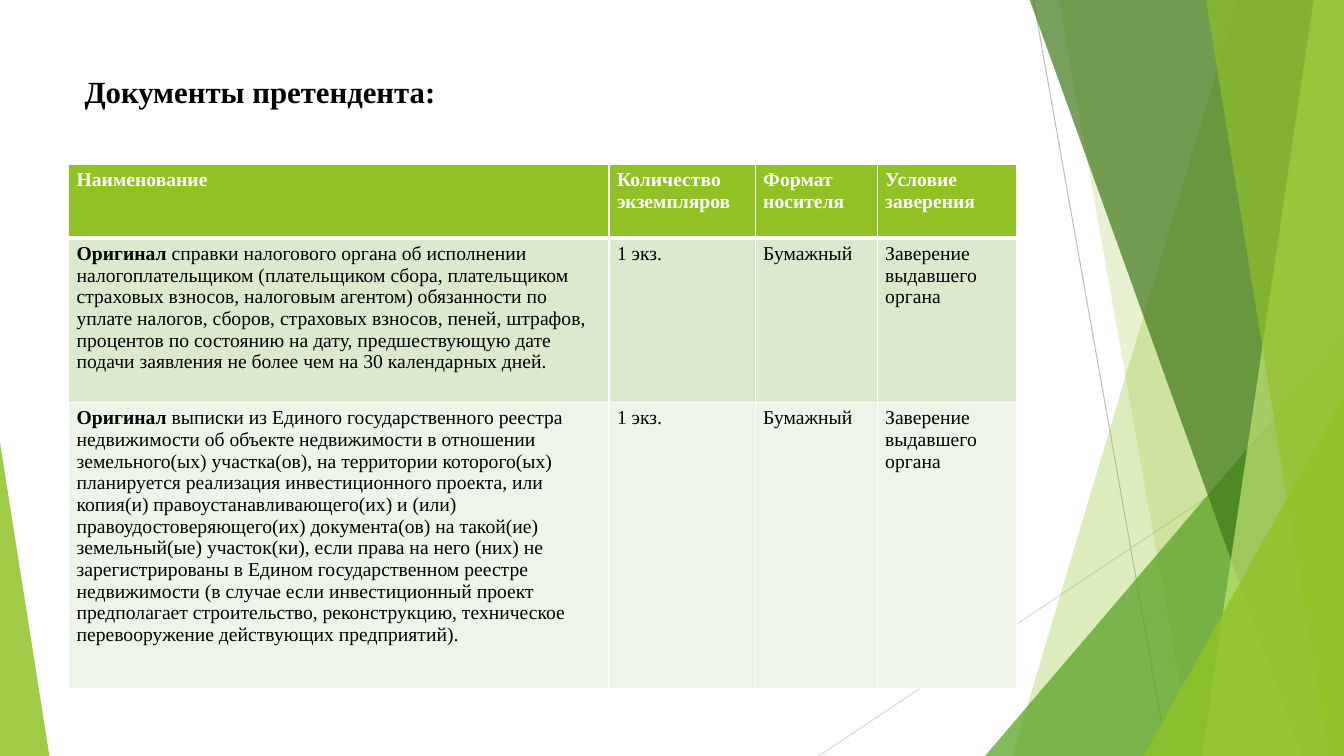
from dataclasses import dataclass

from lxml import etree
from pptx import Presentation, util as u
from pptx.dml.color import RGBColor
from pptx.enum import shapes, text
from pptx.oxml import ns

PX = 9144
WIDE, TALL = 1333, 750


@dataclass(frozen=True)
class Theme:
    """Colours, font and type sizes of the slide."""
    font: str = "Times New Roman"
    head: int = 22
    body: int = 14
    ink: str = "000000"
    white: str = "FFFFFF"
    lime: str = "90C226"
    pale: str = "C0E474"
    leaf: str = "54A021"
    moss: str = "3F7819"
    band: tuple = ("DBE9CD", "EEF4E8")
    rule: tuple = ("BFBFBF", "D9D9D9")


T = Theme()

HEADS = ["Наименование", "Количество экземпляров", "Формат носителя", "Условие заверения"]
TERMS = ["1 экз.", "Бумажный", "Заверение выдавшего органа"]
FIRST = "Оригинал"
DOCS = [
    " справки налогового органа об исполнении налогоплательщиком (плательщиком сбора, "
    "плательщиком страховых взносов, налоговым агентом) обязанности по уплате налогов, "
    "сборов, страховых взносов, пеней, штрафов, процентов по состоянию на дату, "
    "предшествующую дате подачи заявления не более чем на 30 календарных дней.",
    " выписки из Единого государственного реестра недвижимости об объекте недвижимости "
    "в отношении земельного(ых) участка(ов), на территории которого(ых) планируется "
    "реализация инвестиционного проекта, или копия(и) правоустанавливающего(их) и (или) "
    "правоудостоверяющего(их) документа(ов) на такой(ие) земельный(ые) участок(ки), если "
    "права на него (них) не зарегистрированы в Едином государственном реестре "
    "недвижимости (в случае если инвестиционный проект предполагает строительство, "
    "реконструкцию, техническое перевооружение действующих предприятий).",
]


def emu(*vals):
    """Turn px lengths into EMU."""
    return [u.Emu(v * PX) for v in vals]


def tint(fill, hue, alpha=100):
    """Set a solid fill with an opacity in percent."""
    fill.solid()
    fill.fore_color.rgb = RGBColor.from_string(hue)
    if alpha < 100:
        clr = fill._xPr.find(".//" + ns.qn("a:srgbClr"))
        etree.SubElement(clr, ns.qn("a:alpha"), val=str(alpha * 1000))


def paint(shape, hue, alpha):
    """Give a shape a flat see-through fill."""
    shape.shadow.inherit = False
    shape.line.fill.background()
    tint(shape.fill, hue, alpha)


def wedge(slide, box, adj, hue, alpha):
    """Draw a triangle whose tip sits at adj of its width."""
    tri = slide.shapes.add_shape(shapes.MSO_SHAPE.ISOSCELES_TRIANGLE, *emu(*box))
    tri.adjustments[0] = adj
    paint(tri, hue, alpha)


def shard(slide, box, top, low, hue, alpha):
    """Draw a band from a slanted left edge to the right of the box."""
    x, y, w, h = box
    pen = slide.shapes.build_freeform(*emu(x + top, y), scale=1.0)
    ends = [(x + w, y), (x + w, y + h), (x + low, y + h)]
    pen.add_line_segments([emu(*end) for end in ends], close=True)
    paint(pen.convert_to_shape(), hue, alpha)


def stroke(slide, ends, hue):
    """Draw a thin straight line."""
    line = slide.shapes.add_connector(shapes.MSO_CONNECTOR.STRAIGHT, *emu(*ends))
    line.line.width = u.Pt(0.75)
    tint(line.line.fill, hue)
    etree.SubElement(line._element.spPr, ns.qn("a:effectLst"))


def decor(slide, box):
    """Place the lines and green facets on the right of the slide."""
    x, y, w, h = box
    base = y + h
    stroke(slide, (x + 48, 0, x + 181, base), T.rule[0])
    stroke(slide, (x + w, 403, x - 165, base), T.rule[1])
    for top, low, hue, alpha in [(251, 27, T.lime, 30), (73, 206, T.lime, 20)]:
        shard(slide, box, top, low, hue, alpha)
    wedge(slide, (x + w - 356, base - 417, 356, 417), 1, T.leaf, 72)
    for top, low, hue, alpha in [(44, 314, T.moss, 70), (326, 215, T.pale, 70),
                                 (219, 341, T.lime, 65)]:
        shard(slide, box, top, low, hue, alpha)
    wedge(slide, (x + w - 199, base - 357, 199, 357), 1, T.lime, 80)


def write(para, runs, size, hue):
    """Add (words, bold) runs to a paragraph."""
    for words, bold in runs:
        run = para.add_run()
        run.text = words
        look = {"name": T.font, "size": u.Pt(size), "bold": bold}
        for key, val in look.items():
            setattr(run.font, key, val)
        run.font.color.rgb = RGBColor.from_string(hue)


def title(slide, box):
    """Place the heading."""
    frame = slide.shapes.add_textbox(*emu(*box)).text_frame
    look = {"word_wrap": True, "vertical_anchor": text.MSO_ANCHOR.TOP}
    for key, val in look.items():
        setattr(frame, key, val)
    write(frame.paragraphs[0], [("Документы претендента:", True)], T.head, T.ink)


def edge(cell, sides):
    """Draw white borders of the given widths in points."""
    props = cell._tc.get_or_add_tcPr()
    for side, size in sides.items():
        line = etree.SubElement(props, ns.qn("a:ln" + side), w=str(u.Pt(size)))
        fill = etree.SubElement(line, ns.qn("a:solidFill"))
        etree.SubElement(fill, ns.qn("a:srgbClr"), val=T.white)


def grid(slide, box):
    """Place the table of documents."""
    rows = [[[(head, True)] for head in HEADS]]
    rows += [[[(FIRST, True), (doc, False)]] + [[(term, False)] for term in TERMS]
             for doc in DOCS]
    table = slide.shapes.add_table(len(rows), len(HEADS), *emu(*box)).table
    table.first_row = table.horz_banding = False
    for col, wide in zip(table.columns, emu(536, 145, 121, 138)):
        col.width = wide
    for row, tall in zip(table.rows, emu(73, 163, 284)):
        row.height = tall
    pad = dict(zip(("margin_left", "margin_top", "margin_right", "margin_bottom"),
                   emu(8, 5, 8, 5)))
    for r, row in enumerate(rows):
        back = T.band[r - 1] if r else T.lime
        for c, runs in enumerate(row):
            cell = table.cell(r, c)
            for key, val in pad.items():
                setattr(cell, key, val)
            edge(cell, {"L": 1, "R": 1, "T": 3 if r == 1 else 1, "B": 1 if r else 3})
            tint(cell.fill, back)
            write(cell.text_frame.paragraphs[0], runs, T.body, T.ink if r else T.white)


def main():
    """Build the slide and save it."""
    deck = Presentation()
    deck.slide_width, deck.slide_height = emu(WIDE, TALL)
    slide = deck.slides.add_slide(deck.slide_layouts[6])
    tint(slide.background.fill, T.white)
    decor(slide, (977, -1, 356, 751))
    wedge(slide, (0, 439, 49, 311), 0, T.lime, 85)
    title(slide, (74, 67, 940, 144))
    grid(slide, (68, 163, 940, 520))
    deck.save("out.pptx")


if __name__ == "__main__":
    main()
